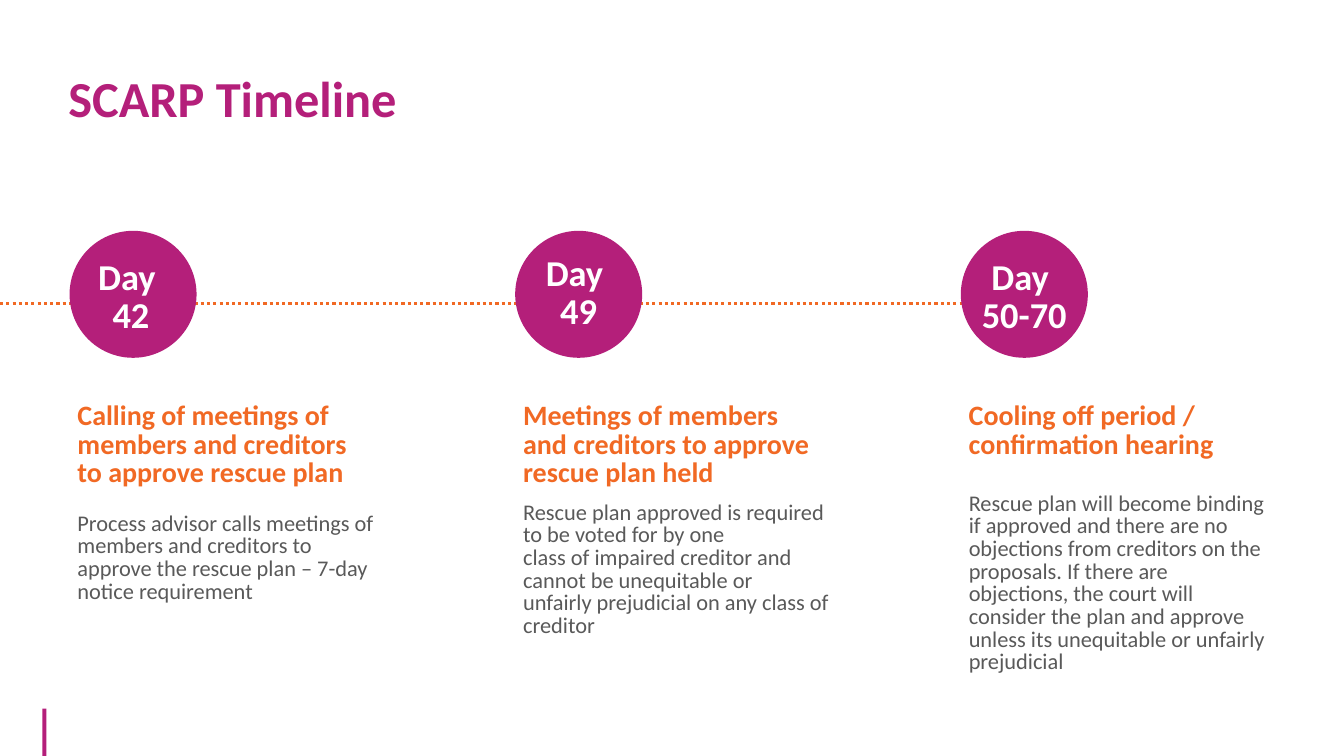
import pptx
import pptx.util
import pptx.dml.color
import pptx.enum.dml
import pptx.enum.shapes
import pptx.enum.text
from lxml import etree

Inches = pptx.util.Inches
Pt = pptx.util.Pt
RGBColor = pptx.dml.color.RGBColor
ALIGN = pptx.enum.text.PP_ALIGN
ANCHOR = pptx.enum.text.MSO_ANCHOR
SHAPE = pptx.enum.shapes.MSO_SHAPE

MAGENTA = RGBColor(0xB4, 0x1F, 0x7A)
ORANGE = RGBColor(0xF1, 0x69, 0x24)
GREY = RGBColor(0x59, 0x59, 0x59)
WHITE = RGBColor(0xFF, 0xFF, 0xFF)


def add_text(shapes, text, left, top, width, height, size, color, spacing,
             bold=False, align=ALIGN.LEFT, anchor=ANCHOR.TOP, grow=True):
    box = shapes.add_textbox(Inches(left), Inches(top), Inches(width), Inches(height))
    frame = box.text_frame
    frame.word_wrap = True
    frame.vertical_anchor = anchor
    if grow:
        frame.auto_size = pptx.enum.text.MSO_AUTO_SIZE.SHAPE_TO_FIT_TEXT
    frame.text = text
    for paragraph in frame.paragraphs:
        paragraph.alignment = align
        paragraph.line_spacing = spacing
        for run in paragraph.runs:
            run.font.name = "Calibri"
            run.font.size = Pt(size)
            run.font.bold = bold
            run.font.color.rgb = color


def add_solid(shapes, preset, left, top, width, height):
    solid = shapes.add_shape(preset, Inches(left), Inches(top), Inches(width), Inches(height))
    solid.shadow.inherit = False
    solid.fill.solid()
    solid.fill.fore_color.rgb = MAGENTA
    solid.line.fill.background()


deck = pptx.Presentation()
deck.slide_width = Inches(13.33)
deck.slide_height = Inches(7.5)
slide = deck.slides.add_slide(deck.slide_layouts[6])

# Footer bar
add_solid(slide.shapes, SHAPE.RECTANGLE, 0.42, 7.03, 0.04, 0.47)

# Dotted timeline behind the day circles
timeline = slide.shapes.add_connector(pptx.enum.shapes.MSO_CONNECTOR.STRAIGHT,
                                      Inches(0), Inches(3.01), Inches(10.24), Inches(3.01))
timeline.line.color.rgb = ORANGE
timeline.line.width = Pt(2.25)
timeline.line.dash_style = pptx.enum.dml.MSO_LINE.ROUND_DOT
etree.SubElement(timeline._element.spPr, pptx.oxml.ns.qn("a:effectLst"))

# Title
add_text(slide.shapes, "SCARP Timeline", 0.58, 0.7, 8.8, 0.64, 36, MAGENTA, 0.8,
         bold=True, anchor=ANCHOR.MIDDLE, grow=False)

# Milestones: day, its left and top, heading, its width and height,
# detail, its top, width and height
milestones = [
    ("42", 0.67, 2.53,
     "Calling of meetings of\nmembers and creditors\nto approve rescue plan", 3.83, 0.95,
     "Process advisor calls meetings of members and creditors to approve "
     "the rescue plan – 7-day notice requirement", 5.04, 3.29, 1.23),
    ("49", 5.11, 2.49,
     "Meetings of members and creditors to approve rescue plan held", 3.1, 0.95,
     "Rescue plan approved is required to be voted for by one\n"
     "class of impaired creditor and cannot be unequitable or\n"
     "unfairly prejudicial on any class of creditor", 4.93, 3.29, 1.67),
    ("50-70", 9.53, 2.53,
     "Cooling off period /\nconfirmation hearing", 3.83, 0.67,
     "Rescue plan will become binding if approved and there are no objections "
     "from creditors on the proposals. If there are objections, the court will "
     "consider the plan and approve unless its unequitable or unfairly prejudicial",
     4.84, 3.15, 2.12),
]
for column, (day, day_left, day_top, heading, heading_width, heading_height,
             detail, detail_top, detail_width, detail_height) in enumerate(milestones):
    circle_left = 0.69 + 4.42 * column
    text_left = circle_left - 0.02
    milestone = slide.shapes.add_group_shape().shapes
    add_solid(milestone, SHAPE.OVAL, circle_left, 2.29, 1.26, 1.26)
    add_text(milestone, "Day \n" + day, day_left, day_top, 1.26, 0.86, 26, WHITE, Pt(27.2),
             bold=True, align=ALIGN.CENTER)
    add_text(milestone, heading, text_left, 3.95, heading_width, heading_height,
             20, ORANGE, Pt(20.2), bold=True)
    add_text(milestone, detail, text_left, detail_top, detail_width, detail_height,
             16, GREY, Pt(16.2))

deck.save("out.pptx")
